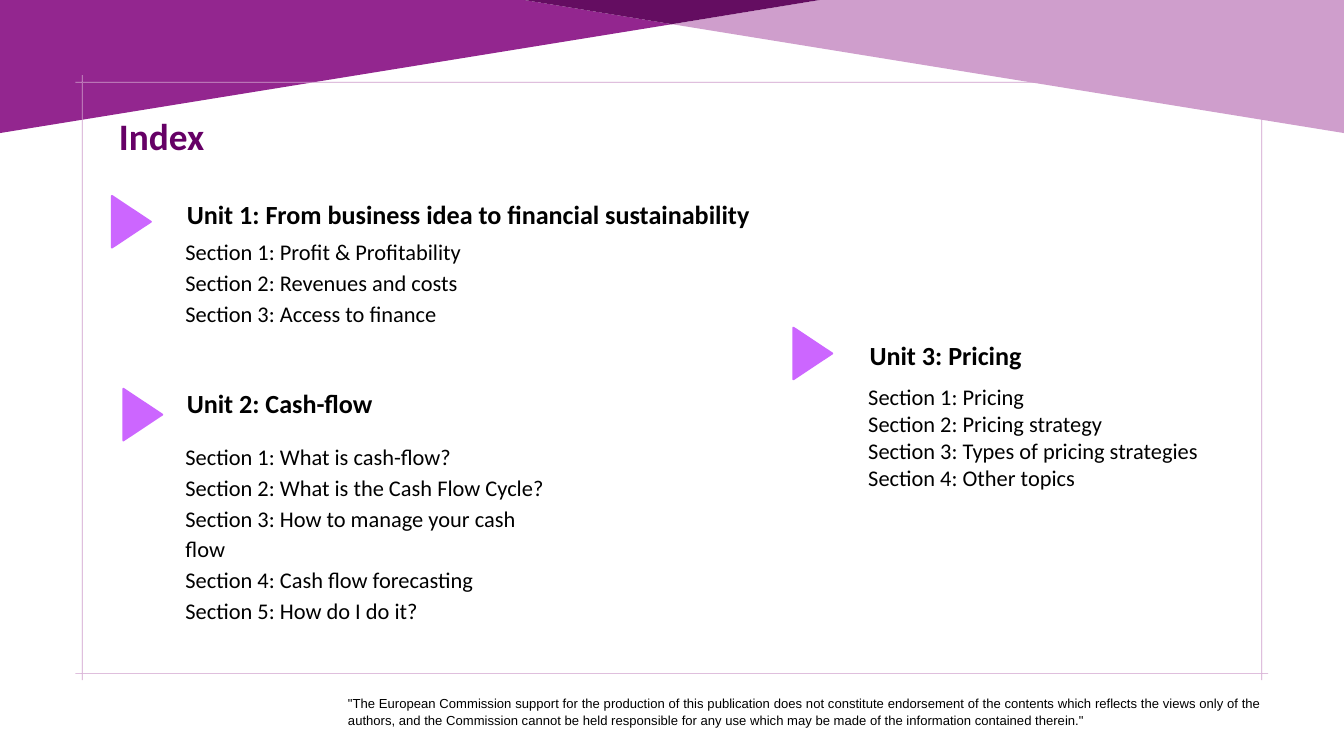
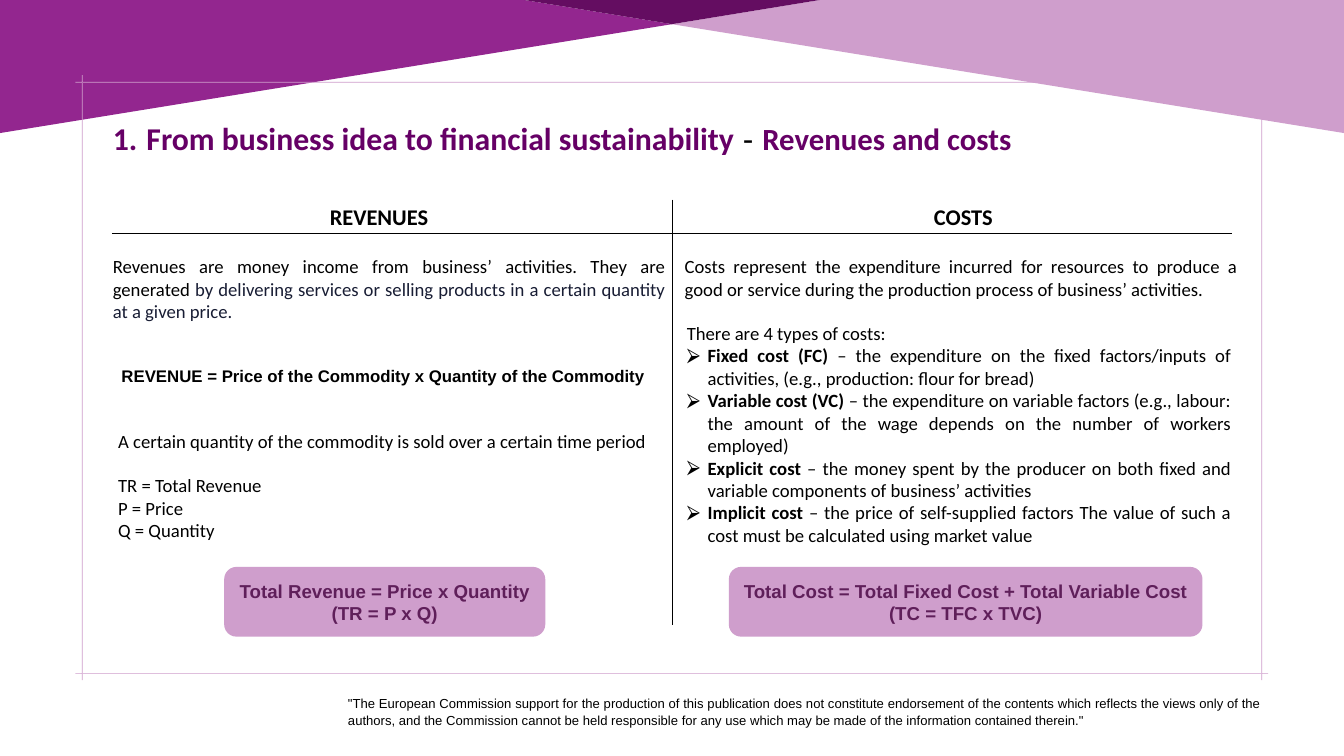
import pptx
import pptx.util
import pptx.dml.color
import pptx.enum.shapes
import pptx.enum.text
import pptx.oxml.ns
from lxml import etree

Inches, Pt = pptx.util.Inches, pptx.util.Pt
SHAPE = pptx.enum.shapes.MSO_SHAPE
ALIGN = pptx.enum.text.PP_ALIGN
ANCHOR = pptx.enum.text.MSO_ANCHOR

# Shared look
W, H = 20, 11.25
PURPLE, LILAC, DARK = "93268F", "CF9ECC", "640D61"
TITLE, FORMULA, ARROW, NAVY, BLACK = "660066", "5F1F5A", "CC66FF", "181D34", "000000"
FRAME = dict(left=1.22, right=18.77, top=1.22, bottom=10.02, overhang=0.1, line=0.01)
DISCLAIMER = (
    '"The European Commission support for the production of this publication does not '
    "constitute endorsement of the contents which reflects the views only of the authors, "
    "and the Commission cannot be held responsible for any use which may be made of the "
    'information contained therein."')

# Index: heading, sections, left, heading top, list top, width, list height,
# heading and list line spacing, arrow position
UNITS = [
    dict(heading="Unit 1: From business idea to financial sustainability",
         sections=["Section 1: Profit & Profitability", "Section 2: Revenues and costs",
                   "Section 3: Access to finance"],
         left=2.66, top=2.84, list_top=3.44, width=8.69, list_height=1.43,
         heading_spacing=1.15, spacing=1.15, arrow=(1.57, 3.01)),
    dict(heading="Unit 2: Cash-flow",
         sections=["Section 1: What is cash-flow?", "Section 2: What is the Cash Flow Cycle?",
                   "Section 3: How to manage your cash flow",
                   "Section 4: Cash flow forecasting", "Section 5: How do I do it?"],
         left=2.66, top=5.72, list_top=6.48, width=5.6, list_height=2.36,
         heading_spacing=1, spacing=1.15, arrow=(1.74, 5.88)),
    dict(heading="Unit 3: Pricing",
         sections=["Section 1: Pricing", "Section 2: Pricing strategy",
                   "Section 3: Types of pricing strategies", "Section 4: Other topics"],
         left=12.82, top=5, list_top=5.65, width=5.6, list_height=1.72,
         heading_spacing=1, spacing=1, arrow=(11.71, 4.97)),
]

# Revenues and costs
TOPIC_TITLE = [("1.\tFrom business idea to financial sustainability", {}),
               (" - ", dict(font="Arial", color=BLACK, bold=False)),
               ("Revenues and costs", dict(size=33))]
COLUMN_HEADINGS = [("REVENUES", (4.81, 2.98, 1.83, 0.5)), ("COSTS", (13.8, 2.97, 1.12, 0.5))]
REVENUE_MEANING = [("Revenues are money income from business’ activities. They are generated ", {}),
                   ("by delivering services or selling products in a certain quantity "
                    "at a given price.", dict(color=NAVY))]
REVENUE_RULE = "REVENUE = Price of the Commodity x Quantity of the Commodity"
REVENUE_TERMS = ["A certain quantity of the commodity is sold over a certain time period",
                 "TR = Total Revenue", "P = Price", "Q = Quantity"]
COST_MEANING = ("Costs represent the expenditure incurred for resources to produce a good or "
                "service during the production process of business’ activities.")
COST_INTRO = "There are 4 types of costs:"
COST_TYPES = [
    ("Fixed cost (FC) ", "– the expenditure on the fixed factors/inputs of activities, "
     "(e.g., production: flour for bread)"),
    ("Variable cost (VC) ", "– the expenditure on variable factors (e.g., labour: the amount "
     "of the wage depends on the number of workers employed) "),
    ("Explicit cost ", "– the money spent by the producer on both fixed and variable "
     "components of business’ activities"),
    ("Implicit cost ", "– the price of self-supplied factors The value of such a cost must "
     "be calculated using market value"),
]
FORMULAS = [(["Total Revenue = Price x Quantity", "(TR = P x Q)"], 3.35, 4.75),
            (["Total Cost = Total Fixed Cost + Total Variable Cost", "(TC = TFC x TVC)"],
             10.86, 7.02)]


def rgb(color):
    return pptx.dml.color.RGBColor.from_string(color)


def place(shape, box):
    shape.left, shape.top, shape.width, shape.height = map(Inches, box)
    return shape


def add_props(paragraph, *elements):
    """Append (tag, attributes) elements to the paragraph properties."""
    props = paragraph._p.get_or_add_pPr()
    for tag, attributes in elements:
        etree.SubElement(props, pptx.oxml.ns.qn(tag), attributes)
    return props


def write(shape, paragraphs, size=20, font="Calibri", color=BLACK, bold=False,
          align=ALIGN.LEFT, spacing=1, inset=0.1, anchor=ANCHOR.TOP, bullet=None,
          first_bullet=0, gap_before=None, tab=None):
    """Fill a shape; a paragraph is a string or a list of (text, changes) runs."""
    frame = shape.text_frame
    frame.word_wrap = True
    frame.auto_size = pptx.enum.text.MSO_AUTO_SIZE.NONE
    frame.vertical_anchor = anchor
    frame.margin_left = frame.margin_right = Inches(inset)
    frame.margin_top = frame.margin_bottom = Inches(0.05)
    for number, content in enumerate(paragraphs):
        paragraph = frame.paragraphs[0] if number == 0 else frame.add_paragraph()
        bulleted = bullet and number >= first_bullet
        indent = Inches(0.31) if bulleted else 0
        if bulleted:
            props = add_props(paragraph, ("a:buFont", {"typeface": "Arial"}),
                              ("a:buChar", {"char": bullet}))
        else:
            props = add_props(paragraph, ("a:buNone", {}))
        props.set("marL", str(indent))
        props.set("indent", str(-indent))
        if tab:
            stops = etree.SubElement(props, pptx.oxml.ns.qn("a:tabLst"))
            etree.SubElement(stops, pptx.oxml.ns.qn("a:tab"), pos=str(Inches(tab)), algn="l")
        paragraph.alignment = align
        paragraph.line_spacing = spacing
        paragraph.space_before = Pt((gap_before or {}).get(number, 0))
        paragraph.space_after = Pt(0)
        for text, changes in [(content, {})] if isinstance(content, str) else content:
            look = dict(size=size, font=font, color=color, bold=bold) | changes
            run = paragraph.add_run()
            run.text = text
            run.font.size, run.font.name = Pt(look["size"]), look["font"]
            run.font.bold = look["bold"]
            run.font.color.rgb = rgb(look["color"])
    return shape


def add_text(slide, box, paragraphs, **look):
    return write(slide.shapes.add_textbox(*map(Inches, box)), paragraphs, **look)


def add_preset(slide, preset, box, color):
    shape = slide.shapes.add_shape(preset, *map(Inches, box))
    shape.shadow.inherit = False
    shape.fill.solid()
    shape.fill.fore_color.rgb = shape.line.color.rgb = rgb(color)
    shape.line.width = Pt(2)
    return shape


def add_outline(slide, color, *contours):
    """Draw one filled freeform from closed contours given in inches."""
    contours = [[(Inches(x), Inches(y)) for x, y in contour] for contour in contours]
    builder = slide.shapes.build_freeform(*contours[0][0])
    for number, (start, *rest) in enumerate(contours):
        if number:
            builder.move_to(*start)
        builder.add_line_segments(rest, close=True)
    shape = builder.convert_to_shape()
    shape.shadow.inherit = False
    shape.fill.solid()
    shape.fill.fore_color.rgb = rgb(color)
    shape.line.fill.background()


def add_rule(slide, start, end):
    rule = slide.shapes.add_connector(pptx.enum.shapes.MSO_CONNECTOR.STRAIGHT,
                                      *map(Inches, start + end))
    rule.line.color.rgb = rgb(BLACK)
    rule.line.width = Pt(0.75)
    etree.SubElement(rule._element.spPr, pptx.oxml.ns.qn("a:effectLst"))


def bar(left, top, right, bottom):
    return [(left, top), (right, top), (right, bottom), (left, bottom)]


def add_decor(slide):
    """Top bands, thin frame and disclaimer."""
    cross, edge = (W * 0.5, H * 0.032), H * 0.176
    inner_left, inner_right = (W * 0.39, 0), (W * 0.61, 0)
    add_outline(slide, PURPLE, [(0, edge), (0, 0), inner_left, cross])
    f, over, line = FRAME, FRAME["overhang"], FRAME["line"]
    add_outline(
        slide, LILAC,
        *[bar(f["left"] - over, y, f["right"] + over, y + line) for y in (f["top"], f["bottom"])],
        *[bar(x, f["top"] - over, x + line, f["bottom"] + over) for x in (f["left"], f["right"])])
    add_outline(slide, LILAC, [(W, edge), cross, inner_right, (W, 0)])
    add_outline(slide, DARK, [cross, inner_left, inner_right])
    add_text(slide, (5.08, 10.29, 13.79, 0.52), [DISCLAIMER], size=14, font="Arial",
             align=ALIGN.JUSTIFY, spacing=1.07)


def new_slide(deck, layout, title, box, **look):
    """Add a decorated slide; return it with its body placeholders."""
    slide = deck.slides.add_slide(deck.slide_layouts.get_by_name(layout))
    add_decor(slide)
    write(place(slide.shapes.title, box), [title], color=TITLE, bold=True, **look)
    return slide, list(slide.placeholders)[1:]


def build_index(deck):
    slide, lists = new_slide(deck, "Comparison", "Index", (1.67, 1.64, 10.35, 0.77), size=40)
    for unit, sections in zip(UNITS, lists):
        left, width = unit["left"], unit["width"]
        place(sections, (left, unit["list_top"], width, unit["list_height"]))
        write(sections, unit["sections"], size=24, spacing=unit["spacing"])
        add_text(slide, (left, unit["top"], width, 0.57), [unit["heading"]], size=28, bold=True,
                 inset=0.12, spacing=unit["heading_spacing"])
        arrow = add_preset(slide, SHAPE.ISOSCELES_TRIANGLE, unit["arrow"] + (0.77, 0.58), ARROW)
        arrow.rotation = 90
    for unused in lists[len(UNITS):]:
        unused._element.getparent().remove(unused._element)


def build_revenues_and_costs(deck):
    slide, (costs,) = new_slide(deck, "Title and Content", TOPIC_TITLE,
                                (1.58, 1.72, 13.83, 0.67), size=34, tab=1)
    add_rule(slide, (W / 2, 2.97), (W / 2, 9.3))
    add_rule(slide, (W / 12, 3.47), (W * 11 / 12, 3.47))
    for heading, box in COLUMN_HEADINGS:
        add_text(slide, box, [heading], size=24, bold=True)

    # Revenues column
    add_text(slide, (1.58, 3.75, 8.42, 1.11), [REVENUE_MEANING], align=ALIGN.JUSTIFY)
    add_text(slide, (1.71, 5.4, 8.03, 0.4), [REVENUE_RULE], size=18, font="Arial", bold=True)
    add_text(slide, (1.66, 6.34, 8.13, 1.78), REVENUE_TERMS, align=ALIGN.JUSTIFY,
             gap_before={1: 24})

    # Costs column
    add_text(slide, (10.09, 3.75, 8.42, 0.77), [COST_MEANING], align=ALIGN.JUSTIFY)
    kinds = [[(name, dict(bold=True)), (meaning, {})] for name, meaning in COST_TYPES]
    write(place(costs, (10.12, 4.74, 8.3, 3.47)), [COST_INTRO] + kinds,
          align=ALIGN.JUSTIFY, bullet="⮚", first_bullet=1)

    # Formula boxes
    for lines, left, width in FORMULAS:
        formula = add_preset(slide, SHAPE.ROUNDED_RECTANGLE, (left, 8.45, width, 1.01), LILAC)
        write(formula, lines, font="Arial", color=FORMULA, bold=True, align=ALIGN.CENTER,
              anchor=ANCHOR.MIDDLE)


def main():
    deck = pptx.Presentation()
    deck.slide_width, deck.slide_height = Inches(W), Inches(H)
    build_index(deck)
    build_revenues_and_costs(deck)
    deck.save("out.pptx")


if __name__ == "__main__":
    main()
